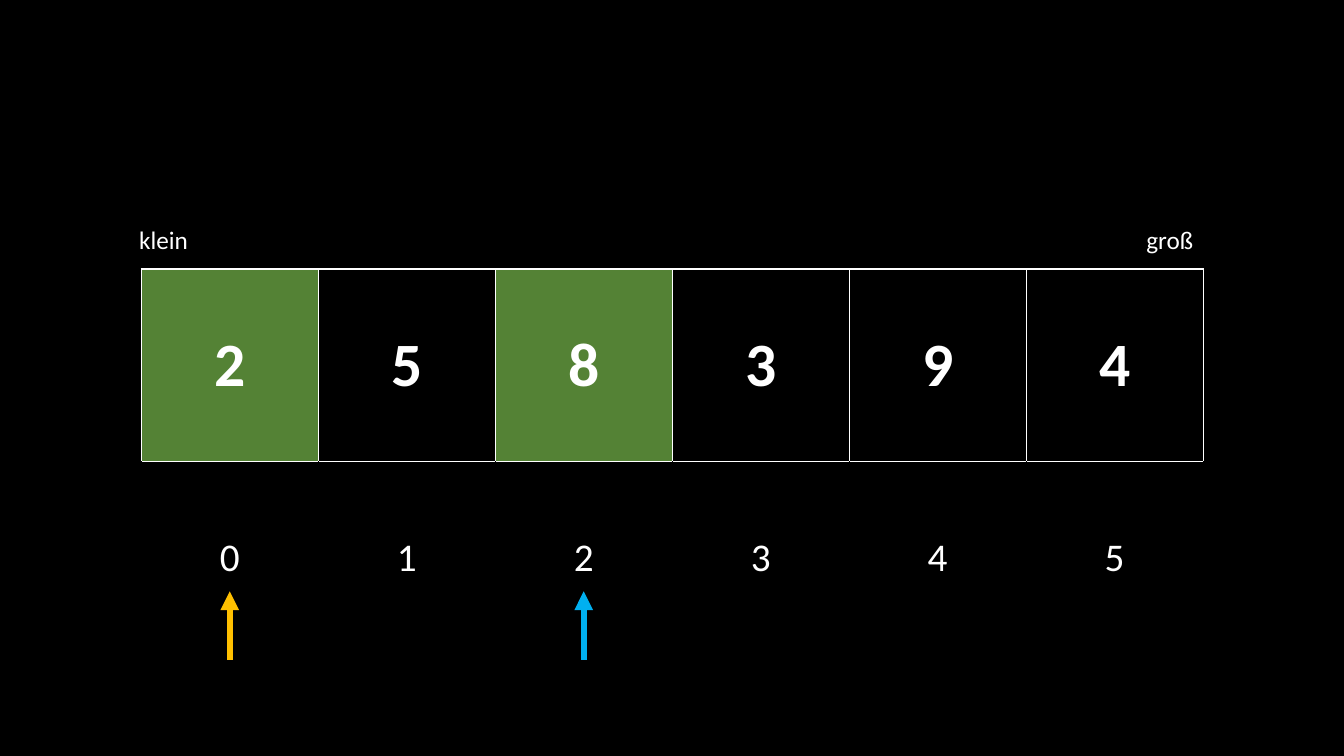
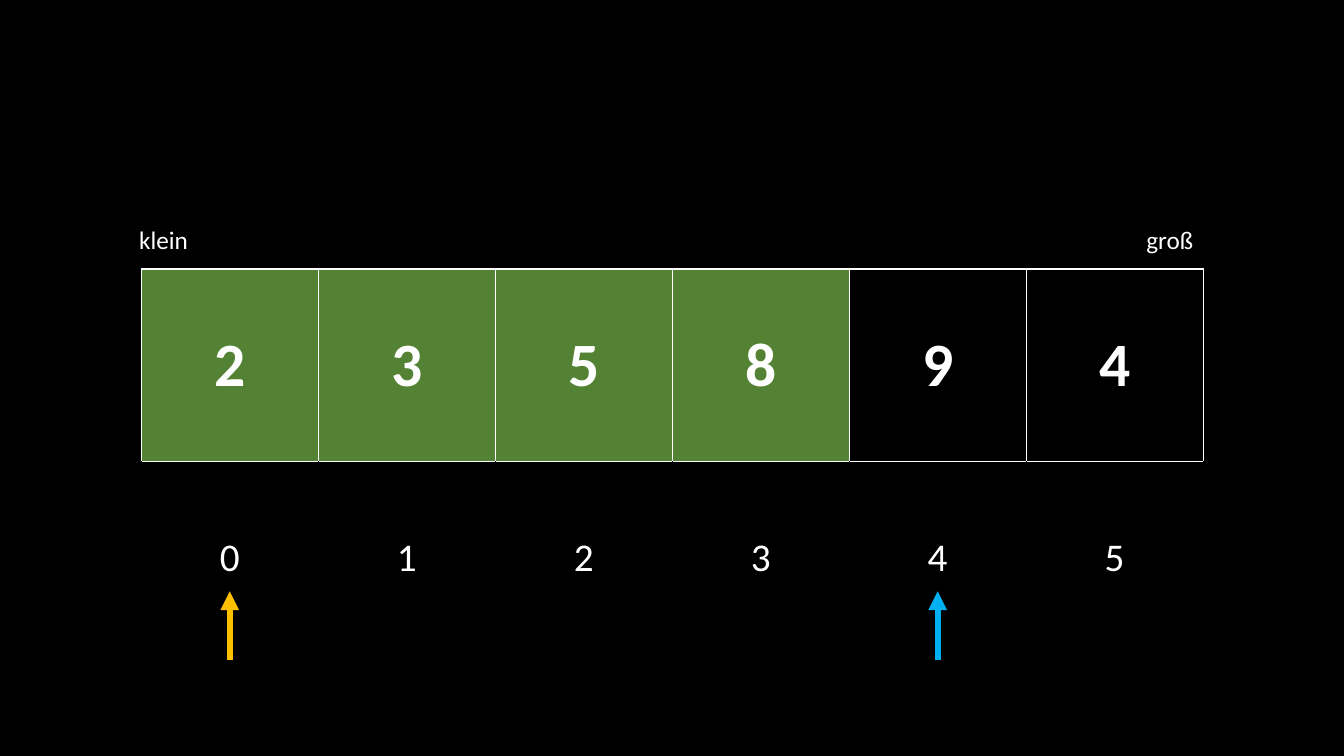
from dataclasses import dataclass

from lxml import etree
from pptx import Presentation
from pptx.dml.color import RGBColor
from pptx.enum.shapes import MSO_CONNECTOR
from pptx.enum.text import MSO_ANCHOR, MSO_AUTO_SIZE, PP_ALIGN
from pptx.oxml.ns import qn
from pptx.util import Cm, Pt

STRAIGHT = MSO_CONNECTOR.STRAIGHT
MIDDLE = MSO_ANCHOR.MIDDLE
FIT_TEXT = MSO_AUTO_SIZE.SHAPE_TO_FIT_TEXT
LEFT, CENTER, RIGHT = PP_ALIGN.LEFT, PP_ALIGN.CENTER, PP_ALIGN.RIGHT


@dataclass(frozen=True)
class Theme:
    """Colours, font and sizes shared by all slides."""
    back: str = "000000"
    ink: str = "FFFFFF"
    done: str = "548235"
    start: str = "FFC000"
    current: str = "00B0F0"
    font: str = "Calibri"
    value_size: int = 44
    index_size: int = 28
    label_size: int = 18
    border: float = 1
    arrow: float = 4.5


@dataclass(frozen=True)
class Box:
    """A region of the slide in centimetres."""
    x: float
    y: float
    w: float
    h: float


THEME = Theme()
ARRAY = Box(3.56, 6.78, 26.76, 9.7)
STEPS = [
    {"values": [2, 5, 8, 3, 9, 4], "done": {0, 2}, "current": 2},
    {"values": [2, 3, 5, 8, 9, 4], "done": {0, 1, 2, 3}, "current": 4},
]


def write(tf, text, align, size, bold=False):
    """Put one formatted run into a text frame."""
    p = tf.paragraphs[0]
    p.alignment = align
    r = p.add_run()
    r.text = text
    formats = {"name": THEME.font, "size": Pt(size), "bold": bold}
    for name, value in formats.items():
        setattr(r.font, name, value)
    r.font.color.rgb = RGBColor.from_string(THEME.ink)


def set_borders(cell, colors):
    """Draw cell borders, given in the order left, right, top, bottom."""
    tc_pr = cell._tc.get_or_add_tcPr()
    for side, color in zip("LRTB", colors):
        ln = etree.SubElement(tc_pr, qn(f"a:ln{side}"), w=str(Pt(THEME.border)))
        fill = etree.SubElement(ln, qn("a:solidFill"))
        etree.SubElement(fill, qn("a:srgbClr"), val=color)


def add_array(s, box, values, done):
    """Add the table of values with their indices below."""
    table = s.shapes.add_table(
        2, len(values), Cm(box.x), Cm(box.y), Cm(box.w), Cm(box.h)).table
    table.first_row = table.horz_banding = False
    rows = [
        (values, THEME.value_size, True, [THEME.ink] * 4),
        (range(len(values)), THEME.index_size, False,
         [THEME.back, THEME.back, THEME.ink, THEME.back]),
    ]
    for i, (numbers, size, bold, borders) in enumerate(rows):
        for j, number in enumerate(numbers):
            cell = table.cell(i, j)
            cell.vertical_anchor = MIDDLE
            write(cell.text_frame, str(number), CENTER, size, bold)
            set_borders(cell, borders)
            if i == 0 and j in done:
                cell.fill.solid()
                cell.fill.fore_color.rgb = RGBColor.from_string(THEME.done)
            else:
                cell.fill.background()


def add_labels(s, box):
    """Label both ends of the array above its top edge."""
    width, height = 3.84, 1.03
    ends = [("groß", box.x + box.w - width, RIGHT), ("klein", box.x - 0.3, LEFT)]
    for text, x, align in ends:
        label = s.shapes.add_textbox(
            Cm(x), Cm(box.y - 1.25), Cm(width), Cm(height))
        tf = label.text_frame
        tf.word_wrap = True
        tf.auto_size = FIT_TEXT
        write(tf, text, align, THEME.label_size)


def add_pointer(s, box, count, index, color):
    """Add an upward arrow below the index of one column."""
    x = Cm(box.x + (index + 0.5) * box.w / count)
    bottom = box.y + box.h
    arrow = s.shapes.add_connector(
        STRAIGHT, x, Cm(bottom + 0.14), x, Cm(bottom - 1.58))
    arrow.line.width = Pt(THEME.arrow)
    arrow.line.color.rgb = RGBColor.from_string(color)
    etree.SubElement(arrow.line._get_or_add_ln(), qn("a:tailEnd"), type="triangle")
    etree.SubElement(arrow._element.spPr, qn("a:effectLst"))


def add_step(prs, box, values, done, current):
    """Add a slide showing one step of the sort."""
    s = prs.slides.add_slide(prs.slide_layouts[6])
    fill = s.background.fill
    fill.solid()
    fill.fore_color.rgb = RGBColor.from_string(THEME.back)
    add_array(s, box, values, done)
    add_labels(s, box)
    for index, color in [(current, THEME.current), (0, THEME.start)]:
        add_pointer(s, box, len(values), index, color)


def main():
    """Build and save the presentation."""
    prs = Presentation()
    prs.slide_width, prs.slide_height = Cm(33.87), Cm(19.05)
    for step in STEPS:
        add_step(prs, ARRAY, **step)
    prs.save("out.pptx")


if __name__ == "__main__":
    main()
